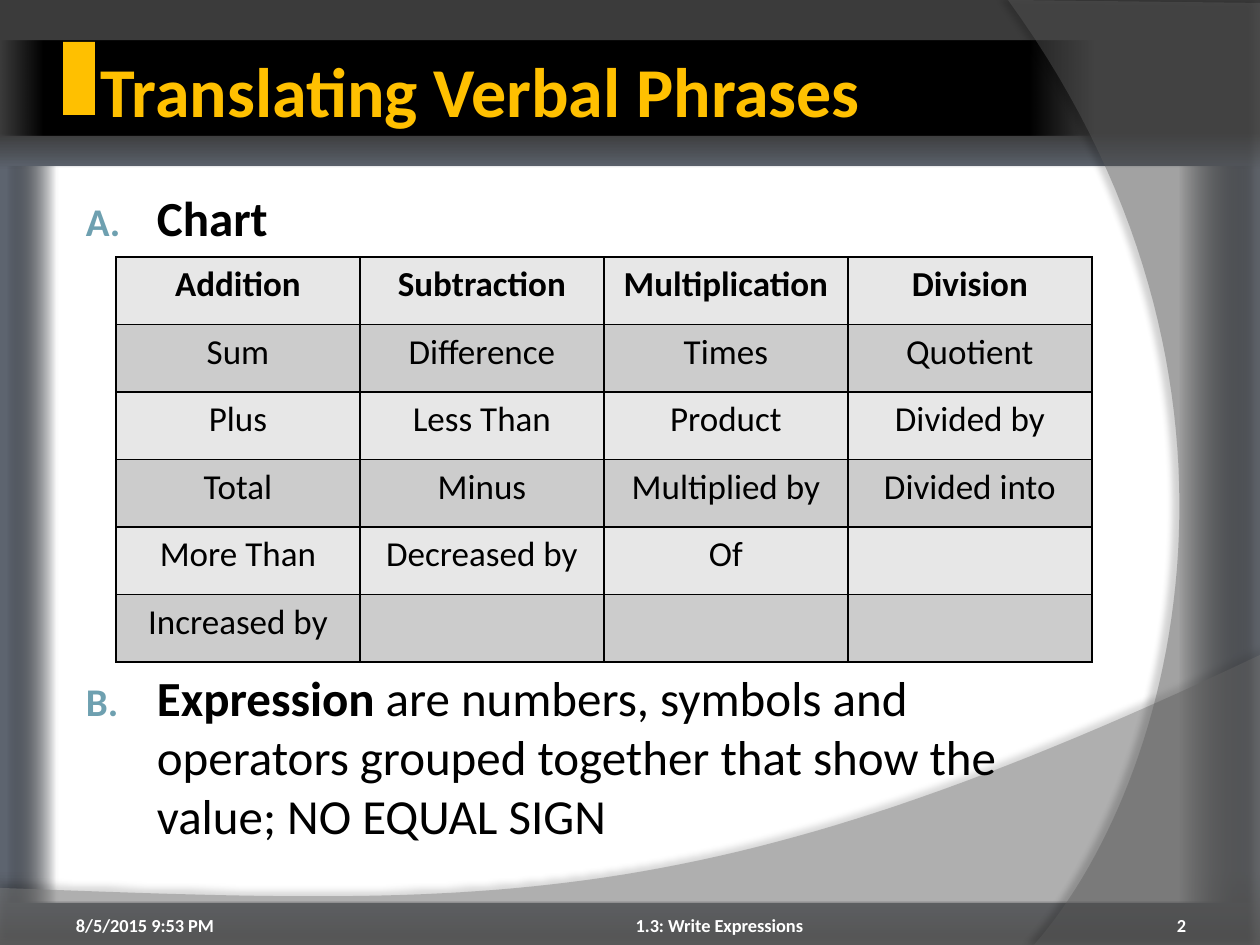
"""Build the slide on translating verbal phrases into operations."""
from dataclasses import dataclass
from typing import NamedTuple

from lxml.etree import SubElement
from pptx import Presentation
from pptx.dml.color import RGBColor
from pptx.enum.shapes import MSO_SHAPE
from pptx.enum.text import MSO_ANCHOR, PP_ALIGN
from pptx.oxml.ns import qn
from pptx.util import Emu, Pt

PX_PER_INCH = 126


@dataclass(frozen=True)
class Theme:
    """Colours, font and type sizes of the deck."""
    font: str = "Calibri"
    gold: str = "FFC000"
    black: str = "000000"
    white: str = "FFFFFF"
    dark: str = "3B3B3B"
    slate: str = "5D646F"
    number: str = "6EA0B0"
    light_row: str = "E7E7E7"
    dark_row: str = "CCCCCC"
    title_size: float = 40
    body_size: float = 28
    table_size: float = 20
    footer_size: float = 10.5


THEME = Theme()


class Box(NamedTuple):
    """A rectangle in px."""
    left: int
    top: int
    width: int
    height: int


class Stop(NamedTuple):
    """A gradient stop with position and opacity in percent."""
    position: int
    color: str
    opacity: int = 100


class Span(NamedTuple):
    """A run of text."""
    text: str
    bold: bool = True


class Label(NamedTuple):
    """A text box of one paragraph."""
    box: Box
    spans: tuple[Span, ...]
    size: float
    color: str
    insets: tuple[int, int, int, int]
    anchor: MSO_ANCHOR = MSO_ANCHOR.BOTTOM
    align: PP_ALIGN = PP_ALIGN.LEFT
    number: int = 0


class Swoosh(NamedTuple):
    """A curved panel: straight corners, then a Bezier back to the first one."""
    corners: tuple[tuple[int, int], ...]
    curve: tuple[tuple[int, int], ...]
    color: str
    opacity: int
    shadow_opacity: int
    shadow_distance: float
    shadow_angle: int


FADE_BLACK = (Stop(0, THEME.black, 0), Stop(4, THEME.black),
              Stop(94, THEME.black), Stop(100, THEME.black, 0))
FADE_WHITE = (Stop(0, THEME.black, 0), Stop(4, THEME.white),
              Stop(94, THEME.white), Stop(100, THEME.black, 0))
BACKDROP = (Stop(0, THEME.dark), Stop(14, THEME.dark), Stop(18, THEME.slate),
            Stop(92, THEME.slate), Stop(100, THEME.dark))
SWOOSHES = (
    Swoosh(((0, 888), (0, 945), (1260, 945), (1260, 655)),
           ((704, 919), (493, 906), (0, 888)), "7F7F7F", 45, 35, 3.5, 270),
    Swoosh(((1260, 3), (1260, 945), (1034, 945)),
           ((1178, 780), (1283, 378), (1008, 0)), "5E5E5E", 40, 45, 4, 180),
)
BODY_INSETS = (13, 6, 13, 6)
LABELS = (
    Label(Box(95, 42, 993, 95), (Span("Translating Verbal Phrases"),),
          THEME.title_size, THEME.gold, (6, 6, 6, 6), MSO_ANCHOR.MIDDLE),
    Label(Box(63, 903, 294, 33), (Span("8/5/2015 9:53 PM"),),
          THEME.footer_size, THEME.white, (13, 6, 13, 0)),
    Label(Box(368, 903, 703, 33), (Span("1.3: Write Expressions"),),
          THEME.footer_size, THEME.white, (0, 6, 0, 0), align=PP_ALIGN.CENTER),
    Label(Box(1081, 903, 105, 33), (Span("2"),),
          THEME.footer_size, THEME.white, (0, 0, 0, 0), align=PP_ALIGN.RIGHT),
    Label(Box(68, 181, 1023, 72), (Span("Chart"),), THEME.body_size,
          THEME.black, BODY_INSETS, MSO_ANCHOR.TOP, number=1),
    Label(Box(68, 662, 1023, 190),
          (Span("Expression "),
           Span("are numbers, symbols and operators grouped together "
                "that show the value; NO EQUAL SIGN", False)),
          THEME.body_size, THEME.black, BODY_INSETS, MSO_ANCHOR.TOP, number=2),
)
TABLE_BOX = Box(116, 257, 976, 405)
PHRASES = (
    ("Addition", "Subtraction", "Multiplication", "Division"),
    ("Sum", "Difference", "Times", "Quotient"),
    ("Plus", "Less Than", "Product", "Divided by"),
    ("Total", "Minus", "Multiplied by", "Divided into"),
    ("More Than", "Decreased by", "Of", ""),
    ("Increased by", "", "", ""),
)


def emu(px: float) -> Emu:
    """Turn px into EMU."""
    return Emu(round(px * 914400 / PX_PER_INCH))


def place(box: Box) -> tuple[Emu, ...]:
    """Turn a box into EMU lengths."""
    return tuple(emu(length) for length in box)


def add_color(parent, color: str, opacity: int = 100) -> None:
    """Append a colour with opacity to an XML element."""
    node = SubElement(parent, qn("a:srgbClr"), val=color)
    if opacity < 100:
        SubElement(node, qn("a:alpha"), val=str(opacity * 1000))


def set_gradient(fill, element, stops: tuple[Stop, ...], angle: int) -> None:
    """Give a fill a linear gradient of any number of stops."""
    fill.gradient()
    fill.gradient_angle = angle
    stop_list = element.find(".//" + qn("a:gsLst"))
    stop_list.clear()
    for stop in stops:
        node = SubElement(stop_list, qn("a:gs"), pos=str(stop.position * 1000))
        add_color(node, stop.color, stop.opacity)


def add_panel(slide, box: Box):
    """Add a plain rectangle without line or shadow."""
    panel = slide.shapes.add_shape(MSO_SHAPE.RECTANGLE, *place(box))
    panel.shadow.inherit = False
    panel.line.fill.background()
    return panel


def add_swoosh(slide, swoosh: Swoosh, steps: int = 60) -> None:
    """Add a translucent curved panel with a soft shadow."""
    start = swoosh.corners[-1]
    first, second, end = swoosh.curve
    points = list(swoosh.corners[1:])
    for step in range(1, steps + 1):
        t = step / steps
        weights = ((1 - t) ** 3, 3 * t * (1 - t) ** 2, 3 * t * t * (1 - t), t ** 3)
        controls = (start, first, second, end)
        points.append(tuple(sum(w * c[axis] for w, c in zip(weights, controls))
                            for axis in (0, 1)))
    builder = slide.shapes.build_freeform(*map(emu, swoosh.corners[0]), scale=1.0)
    builder.add_line_segments([(emu(x), emu(y)) for x, y in points], close=True)
    shape = builder.convert_to_shape()
    shape.line.fill.background()
    shape.fill.solid()
    shape.fill.fore_color.rgb = RGBColor.from_string(swoosh.color)
    color = shape.element.spPr.find(qn("a:solidFill"))[0]
    SubElement(color, qn("a:alpha"), val=str(swoosh.opacity * 1000))
    shape.shadow.inherit = False
    shadow = SubElement(shape.element.spPr.find(qn("a:effectLst")), qn("a:outerShdw"),
                        blurRad=str(Pt(4)), dist=str(Pt(swoosh.shadow_distance)),
                        dir=str(swoosh.shadow_angle * 60000), rotWithShape="0")
    add_color(shadow, THEME.black, swoosh.shadow_opacity)


def add_span(para, span: Span, size: float, color: str) -> None:
    """Add one formatted run to a paragraph."""
    run = para.add_run()
    run.text = span.text
    run.font.name, run.font.size, run.font.bold = THEME.font, Pt(size), span.bold
    run.font.color.rgb = RGBColor.from_string(color)


def add_label(slide, label: Label) -> None:
    """Add a text box, lettered when it has a number."""
    frame = slide.shapes.add_textbox(*place(label.box)).text_frame
    frame.word_wrap = True
    frame.vertical_anchor = label.anchor
    (frame.margin_left, frame.margin_top,
     frame.margin_right, frame.margin_bottom) = map(emu, label.insets)
    para = frame.paragraphs[0]
    para.alignment = label.align
    if label.number:
        props = para._p.get_or_add_pPr()
        props.set("marL", str(emu(76)))
        props.set("indent", str(emu(-71)))
        add_color(SubElement(props, qn("a:buClr")), THEME.number)
        SubElement(props, qn("a:buSzPct"), val="80000")
        SubElement(props, qn("a:buFont"), typeface=THEME.font)
        SubElement(props, qn("a:buAutoNum"), type="alphaUcPeriod",
                   startAt=str(label.number))
    for span in label.spans:
        add_span(para, span, label.size, label.color)


def add_phrase_table(slide) -> None:
    """Add the bordered table of phrases by operation."""
    table = slide.shapes.add_table(len(PHRASES), len(PHRASES[0]), *place(TABLE_BOX)).table
    table.first_row = table.horz_banding = False
    for row, phrases in enumerate(PHRASES):
        table.rows[row].height = emu(TABLE_BOX.height / len(PHRASES))
        for column, phrase in enumerate(phrases):
            cell = table.cell(row, column)
            props = cell._tc.get_or_add_tcPr()
            for side in ("lnL", "lnR", "lnT", "lnB"):
                line = SubElement(props, qn(f"a:{side}"), w=str(Pt(1)))
                add_color(SubElement(line, qn("a:solidFill")), THEME.black)
            cell.fill.solid()
            cell.fill.fore_color.rgb = RGBColor.from_string(
                THEME.dark_row if row % 2 else THEME.light_row)
            if phrase:
                para = cell.text_frame.paragraphs[0]
                para.alignment = PP_ALIGN.CENTER
                add_span(para, Span(phrase, row == 0), THEME.table_size, THEME.black)


def main() -> None:
    """Build and save the deck."""
    deck = Presentation()
    deck.slide_width, deck.slide_height = emu(1260), emu(945)
    slide = deck.slides.add_slide(deck.slide_layouts[6])
    set_gradient(slide.background.fill, slide.element, BACKDROP, 270)
    for box, stops in ((Box(1, 41, 1092, 95), FADE_BLACK),
                       (Box(8, 167, 1245, 736), FADE_WHITE)):
        panel = add_panel(slide, box)
        set_gradient(panel.fill, panel.element, stops, 0)
    for swoosh in SWOOSHES:
        add_swoosh(slide, swoosh)
    accent = add_panel(slide, Box(63, 42, 32, 73))
    accent.fill.solid()
    accent.fill.fore_color.rgb = RGBColor.from_string(THEME.gold)
    for label in LABELS:
        add_label(slide, label)
    add_phrase_table(slide)
    deck.save("out.pptx")


if __name__ == "__main__":
    main()
